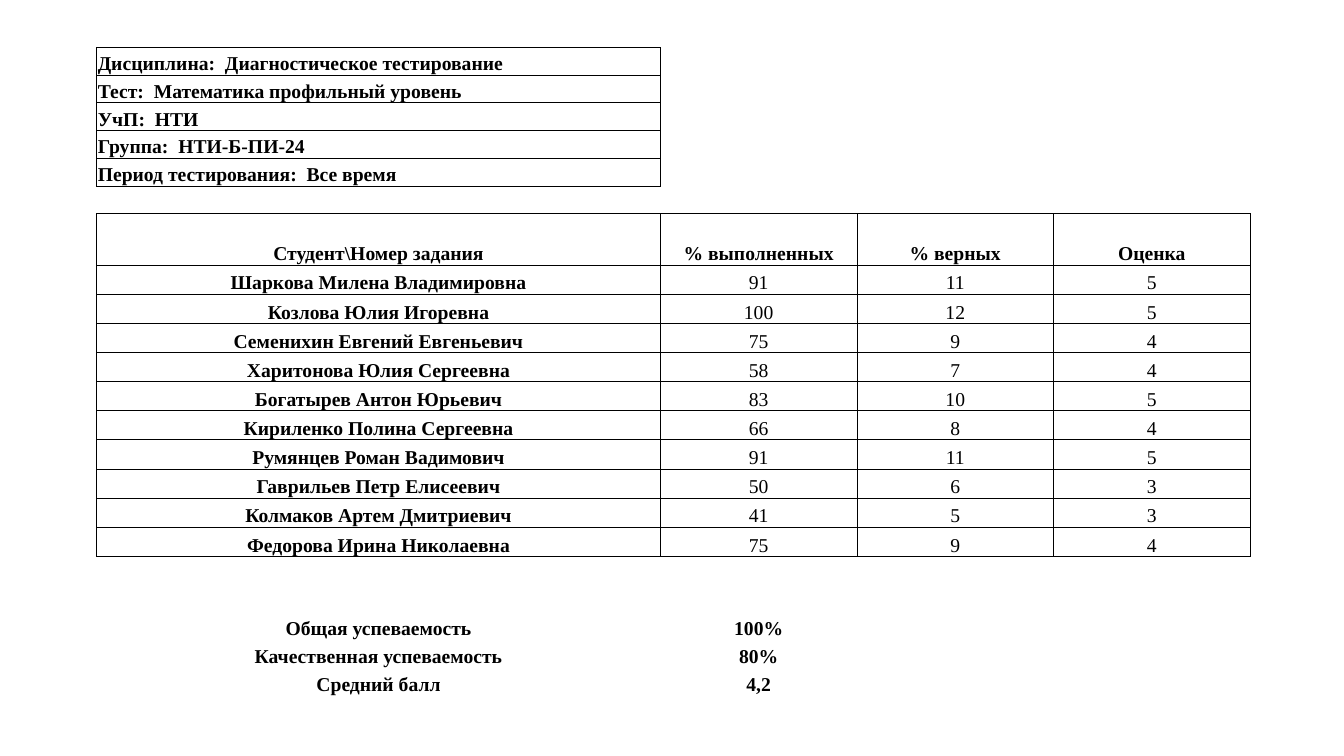
"""Build a one-slide report with the results of a diagnostic test."""
import lxml.etree
import pptx
import pptx.dml.color
import pptx.enum.text
import pptx.oxml.ns
import pptx.util

BLACK = pptx.dml.color.RGBColor(0x00, 0x00, 0x00)
FONT = "Times New Roman"
TEXT_SIZE = pptx.util.Pt(14)
BORDER_WIDTH = pptx.util.Pt(0.5)
INSET = pptx.util.Inches(0.01)
TABLE_LEFT, TABLE_TOP = 0.96, 0.47
COLUMN_WIDTHS = [5.59, 1.95, 1.95, 1.95]

DETAILS = [
    "Дисциплина:  Диагностическое тестирование",
    "Тест:  Математика профильный уровень",
    "УчП:  НТИ",
    "Группа:  НТИ-Б-ПИ-24",
    "Период тестирования:  Все время",
]
HEADINGS = ["Студент\\Номер задания", "% выполненных", "% верных", "Оценка"]
RESULTS = [
    ["Шаркова Милена Владимировна", "91", "11", "5"],
    ["Козлова Юлия Игоревна", "100", "12", "5"],
    ["Семенихин Евгений Евгеньевич", "75", "9", "4"],
    ["Харитонова Юлия Сергеевна", "58", "7", "4"],
    ["Богатырев Антон Юрьевич", "83", "10", "5"],
    ["Кириленко Полина Сергеевна", "66", "8", "4"],
    ["Румянцев Роман Вадимович", "91", "11", "5"],
    ["Гаврильев Петр Елисеевич", "50", "6", "3"],
    ["Колмаков Артем Дмитриевич", "41", "5", "3"],
    ["Федорова Ирина Николаевна", "75", "9", "4"],
]
SUMMARY = [
    ["Общая успеваемость", "100%"],
    ["Качественная успеваемость", "80%"],
    ["Средний балл", "4,2"],
]

ROWS = [[detail] for detail in DETAILS] + [[], HEADINGS] + RESULTS + [[], []] + SUMMARY
HEADER_ROW = len(DETAILS) + 1
LAST_RESULT_ROW = HEADER_ROW + len(RESULTS)
DETAILS_HEIGHT, HEADER_HEIGHT, RESULTS_HEIGHT, SUMMARY_HEIGHT = 1.65, 0.51, 2.89, 1.38


def row_heights():
    """Return the height of every row, shared equally within each block."""
    summary_count = len(ROWS) - LAST_RESULT_ROW - 1
    return (
        [DETAILS_HEIGHT / HEADER_ROW] * HEADER_ROW
        + [HEADER_HEIGHT]
        + [RESULTS_HEIGHT / len(RESULTS)] * len(RESULTS)
        + [SUMMARY_HEIGHT / summary_count] * summary_count
    )


def is_boxed(row, column):
    """Tell whether the cell has a border on all four sides."""
    if row < len(DETAILS):
        return row >= 0 and column == 0
    return HEADER_ROW <= row <= LAST_RESULT_ROW and 0 <= column < len(COLUMN_WIDTHS)


def set_borders(cell, row, column):
    """Draw each side that the cell or its neighbour there needs."""
    qualified = pptx.oxml.ns.qn
    properties = cell._tc.get_or_add_tcPr()
    neighbours = {
        "a:lnL": (row, column - 1),
        "a:lnR": (row, column + 1),
        "a:lnT": (row - 1, column),
        "a:lnB": (row + 1, column),
    }
    for side, neighbour in neighbours.items():
        line = lxml.etree.SubElement(properties, qualified(side), w=str(BORDER_WIDTH))
        if is_boxed(row, column) or is_boxed(*neighbour):
            fill = lxml.etree.SubElement(line, qualified("a:solidFill"))
            lxml.etree.SubElement(fill, qualified("a:srgbClr"), val=str(BLACK))
        else:
            lxml.etree.SubElement(line, qualified("a:noFill"))


def set_text(cell, text, bold, alignment):
    """Write the text at the bottom of the cell."""
    cell.vertical_anchor = pptx.enum.text.MSO_ANCHOR.BOTTOM
    cell.margin_left = cell.margin_right = cell.margin_top = INSET
    cell.margin_bottom = 0
    para = cell.text_frame.paragraphs[0]
    para.text = text
    para.alignment = alignment
    for span in para.runs:
        span.font.name = FONT
        span.font.size = TEXT_SIZE
        span.font.bold = bold
        span.font.color.rgb = BLACK
    if not text:
        end_mark = pptx.oxml.ns.qn("a:endParaRPr")
        lxml.etree.SubElement(para._p, end_mark, sz=str(int(TEXT_SIZE.pt * 100)))


def add_report_table(page):
    """Add the table with test details, student results and summary."""
    heights = row_heights()
    frame = page.shapes.add_table(
        len(ROWS),
        len(COLUMN_WIDTHS),
        pptx.util.Inches(TABLE_LEFT),
        pptx.util.Inches(TABLE_TOP),
        pptx.util.Inches(sum(COLUMN_WIDTHS)),
        pptx.util.Inches(sum(heights)),
    )
    table = frame.table
    table.first_row = table.horz_banding = False
    for column, width in zip(table.columns, COLUMN_WIDTHS):
        column.width = pptx.util.Inches(width)
    for row, height in zip(table.rows, heights):
        row.height = pptx.util.Inches(height)

    align = pptx.enum.text.PP_ALIGN
    for row, texts in enumerate(ROWS):
        alignment = align.LEFT if row < len(DETAILS) else align.CENTER
        is_result = HEADER_ROW < row <= LAST_RESULT_ROW
        for column in range(len(COLUMN_WIDTHS)):
            cell = table.cell(row, column)
            text = texts[column] if column < len(texts) else ""
            set_text(cell, text, column == 0 or not is_result, alignment)
            set_borders(cell, row, column)
            cell.fill.background()


def main():
    """Create the deck and save it."""
    deck = pptx.Presentation()
    deck.slide_width = pptx.util.Inches(13.33)
    deck.slide_height = pptx.util.Inches(7.5)
    page = deck.slides.add_slide(deck.slide_layouts[6])
    add_report_table(page)
    deck.save("out.pptx")


if __name__ == "__main__":
    main()
